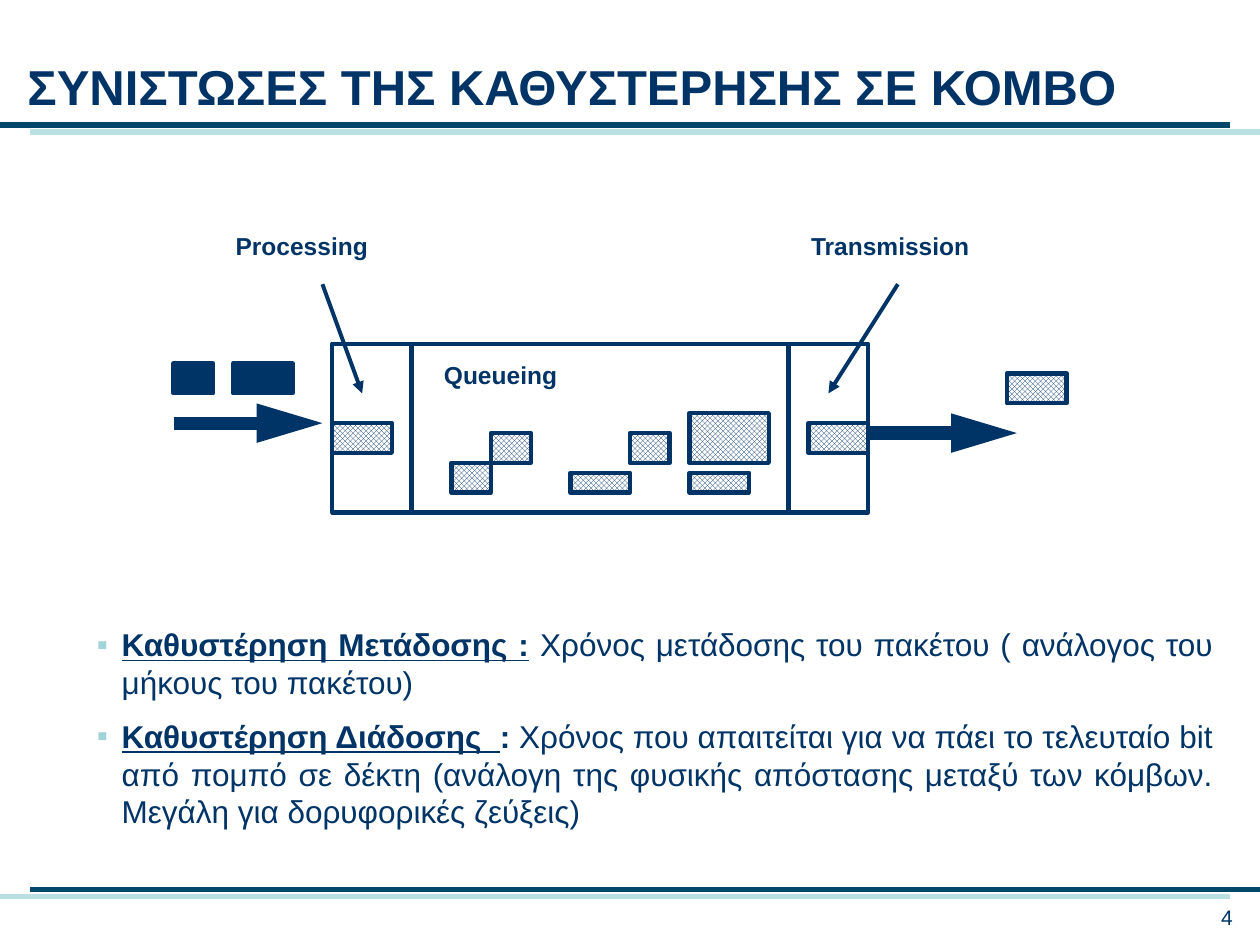
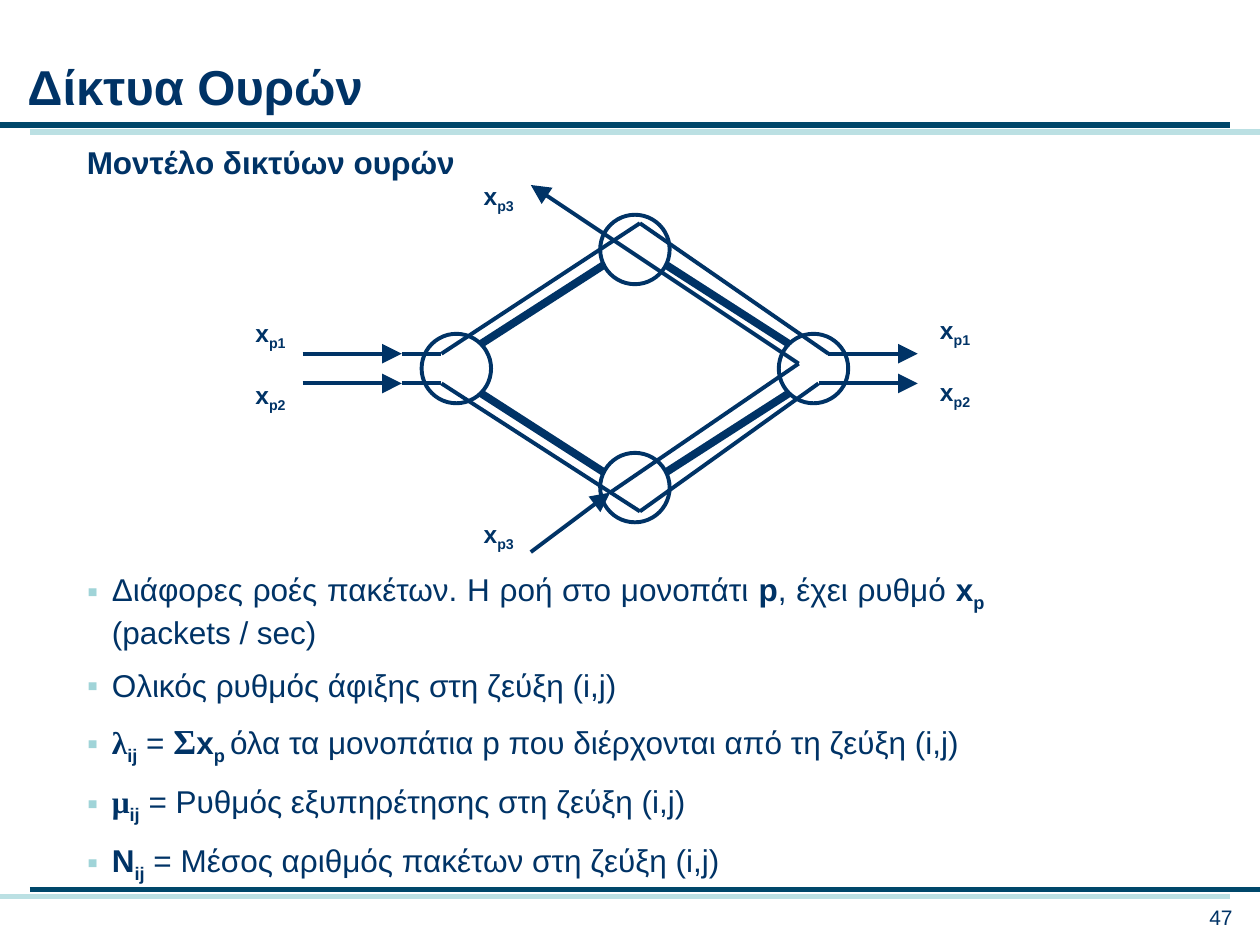
import pptx
import pptx.dml.color
import pptx.enum.dml
import pptx.enum.shapes
import pptx.enum.text
import pptx.oxml
import pptx.oxml.ns
import pptx.util
from lxml import etree

Cm, Pt = pptx.util.Cm, pptx.util.Pt
Align = pptx.enum.text.PP_ALIGN
Shape = pptx.enum.shapes.MSO_SHAPE
NAVY, RULE, PALE, BULLET, WHITE = "003366", "00476A", "BBE0E3", "A0D4D8", "FFFFFF"
BOLD = {"bold": True}
PLAIN = {}
SUB = {"bold": True, "subscript": True}
SERIF = {"bold": True, "name": "Times New Roman"}


def color(value):
    return pptx.dml.color.RGBColor.from_string(value)


def add_xml(parent, tag, **values):
    node = etree.SubElement(parent, pptx.oxml.ns.qn(tag))
    for name, value in values.items():
        node.set(name, value)
    return node


# Text
def write_span(para, text, style):
    span = para.add_run()
    span.text = text
    style = {"name": "Arial", "bold": False, **style}
    if style.pop("subscript", False):
        span._r.get_or_add_rPr().set("baseline", "-25000")
    for name, value in style.items():
        setattr(span.font, name, value)
    span.font.color.rgb = color(NAVY)


def write_text(box, paragraphs, size, align=Align.LEFT, indent=0.0):
    """Fill a box with paragraphs, bulleted when an indent is given."""
    frame = box.text_frame
    settings = {"word_wrap": True, "auto_size": pptx.enum.text.MSO_AUTO_SIZE.NONE,
                "vertical_anchor": pptx.enum.text.MSO_ANCHOR.TOP}
    for name, value in settings.items():
        setattr(frame, name, value)
    for index, spans in enumerate(paragraphs):
        para = frame.add_paragraph() if index else frame.paragraphs[0]
        para.alignment = align
        para.space_before = Pt(9 if index else 0)
        for text, style in spans:
            write_span(para, text, {"size": Pt(size), **style})
        if indent:
            props = para._p.get_or_add_pPr()
            props.set("marL", str(Cm(indent)))
            props.set("indent", str(-Cm(indent)))
            add_xml(add_xml(props, "a:buClr"), "a:srgbClr", val=BULLET)
            add_xml(props, "a:buChar", char="▪")


def add_text(page, left, top, width, height, spans, size, align=Align.LEFT):
    box = page.shapes.add_textbox(Cm(left), Cm(top), Cm(width), Cm(height))
    write_text(box, [spans], size, align)


def fill_placeholder(box, area, paragraphs, size, **layout):
    for name, value in zip(("left", "top", "width", "height"), area):
        setattr(box, name, Cm(value))
    write_text(box, paragraphs, size, **layout)


# Shapes and lines
def add_outline(page, kind, left, top, width, height, fill=None, weight=2.5):
    shape = page.shapes.add_shape(kind, Cm(left), Cm(top), Cm(width), Cm(height))
    shape.shadow.inherit = False
    shape.line.color.rgb = color(NAVY)
    shape.line.width = Pt(weight)
    if fill == "pattern":
        shape.fill.patterned()
        shape.fill.pattern = pptx.enum.dml.MSO_PATTERN.TRELLIS
        shape.fill.fore_color.rgb = color(NAVY)
        shape.fill.back_color.rgb = color(WHITE)
    elif fill:
        shape.fill.solid()
        shape.fill.fore_color.rgb = color(fill)
    else:
        shape.fill.background()


def add_line(page, start, end, weight=2.25, tint=NAVY, head=None):
    """Draw a line; head is the (width, length) of an arrowhead at its end."""
    line = page.shapes.add_connector(
        pptx.enum.shapes.MSO_CONNECTOR.STRAIGHT, *map(Cm, (*start, *end)))
    line.line.color.rgb = color(tint)
    line.line.width = Pt(weight)
    if head:
        add_xml(line.line._get_or_add_ln(), "a:tailEnd",
                type="triangle", w=head[0], len=head[1])
    add_xml(line._element.spPr, "a:effectLst")


# Frame shared by the slides
def add_page(deck, title, number):
    page = deck.slides.add_slide(deck.slide_layouts[1])
    inset, drop = 0.6, 0.14
    for y, dark_left, pale_left in ((2.52, 0, inset), (17.93, inset, 0)):
        for left, top, tint in ((pale_left, y + drop, PALE), (dark_left, y, RULE)):
            add_line(page, (left, top), (left + 25.4 - inset, top), 3, tint)
    fill_placeholder(page.shapes.title, (0.3, 1.02, 23.6, 1.45), [[(title, BOLD)]], 28)
    add_text(page, 22.3, 18.1, 2.8, 0.76, [(number, PLAIN)], 12, Align.RIGHT)
    return page


def add_body(page, area, paragraphs):
    fill_placeholder(page.placeholders[1], area, paragraphs, 18,
                     align=Align.JUSTIFY, indent=0.5)


# Node with its processing, queueing and transmission stages
def add_node_diagram(page, left, top):
    node_top = top + 2.4

    def at(x, y):
        return left + x, node_top + y

    for x, width in ((0, 0.8), (1.2, 1.2)):
        add_outline(page, Shape.RECTANGLE, *at(x, 0.4), width, 0.6, NAVY)
    for x, y in ((0, 1.6), (14, 1.8)):
        add_line(page, at(x, y), at(x + 3, y), 7.5, head=("med", "lg"))
    for x, width in ((3.2, 1.6), (4.8, 7.6), (12.4, 1.6)):
        add_outline(page, Shape.RECTANGLE, *at(x, 0), width, 3.4)

    packets = ((3.2, 1.6, 1.2, 0.6), (5.6, 2.4, 0.8, 0.6), (6.4, 1.8, 0.8, 0.6),
               (8, 2.6, 1.2, 0.4), (9.2, 1.8, 0.8, 0.6), (10.4, 1.4, 1.6, 1),
               (10.4, 2.6, 1.2, 0.4), (12.8, 1.6, 1.2, 0.6), (16.8, 0.6, 1.2, 0.6))
    for x, y, width, height in packets:
        add_outline(page, Shape.RECTANGLE, *at(x, y), width, height, "pattern")

    for text, x, y in (("Processing", 1, -2.4), ("Queueing", 5.2, 0.2),
                       ("Transmission", 12.6, -2.4)):
        add_text(page, *at(x, y), 5, 0.84, [(text, BOLD)], 14)
    for start_x, end_x in ((3, 3.8), (14.6, 13.2)):
        add_line(page, at(start_x, -1.2), at(end_x, 1), head=("med", "med"))


# Four linked nodes crossed by three flows
def add_queue_network(page, left, top, width, height):
    def at(x, y):
        return left + width / 2 + x, top + height / 2 + y

    for side in (-1, 1):
        for level in (-1, 1):
            add_line(page, at(side * 0.3, level * 2.3), at(side * 3.1, level * 0.5), 4.5)
    radius = 0.7
    for x, y in ((-3.6, 0), (0, 2.4), (3.6, 0), (0, -2.4)):
        add_outline(page, Shape.OVAL, *at(x - radius, y - radius),
                    2 * radius, 2 * radius, WHITE, 2.25)

    # Each flow has an arrowhead on its first and last segment
    flows = (((-6.7, -0.3), (-4.7, -0.3), (-3.9, -0.3), (0.1, -2.93), (3.9, -0.3), (5.7, -0.3)),
             ((-6.7, 0.3), (-4.7, 0.3), (-3.9, 0.3), (0.1, 2.88), (3.7, 0.3), (5.7, 0.3)),
             ((-2.1, 3.7), (-0.5, 2.5), (3.3, -0.1), (-2.1, -3.7)))
    for points in flows:
        last = len(points) - 2
        for index, (start, end) in enumerate(zip(points, points[1:])):
            head = ("lg", "lg") if index in (0, last) else None
            add_line(page, at(*start), at(*end), head=head)

    labels = (("p1", -7.9, -1.15), ("p1", 5.9, -1.2), ("p2", -7.9, 0.1),
              ("p2", 5.9, 0.05), ("p3", -3.3, 2.9), ("p3", -3.3, -3.9))
    for name, x, y in labels:
        add_text(page, *at(x, y), 1.8, 0.84, [("x", BOLD), (name, SUB)], 14)


def build_delay_slide(deck):
    page = add_page(deck, "ΣΥΝΙΣΤΩΣΕΣ ΤΗΣ ΚΑΘΥΣΤΕΡΗΣΗΣ ΣΕ ΚΟΜΒΟ", "4")
    add_node_diagram(page, 3.5, 4.53)
    term = {"bold": True, "underline": True}
    add_body(page, (1.7, 12.48, 23.01, 4.45), [
        [("Καθυστέρηση Μετάδοσης :", term), (" ", BOLD),
         ("Χρόνος μετάδοσης του πακέτου ( ανάλογος του μήκους του πακέτου)", PLAIN)],
        [("Καθυστέρηση Διάδοσης  ", term), (": ", BOLD),
         ("Χρόνος που απαιτείται για να πάει το τελευταίο bit από πομπό σε δέκτη "
          "(ανάλογη της φυσικής απόστασης μεταξύ των κόμβων. "
          "Μεγάλη για δορυφορικές ζεύξεις)", PLAIN)]])


def build_network_slide(deck):
    page = add_page(deck, "Δίκτυα Ουρών", "47")
    add_text(page, 1.5, 2.75, 8.8, 1.02, [("Μοντέλο δικτύων ουρών", BOLD)], 18)
    add_queue_network(page, 4.8, 3.43, 16, 8)
    add_body(page, (1.5, 11.36, 18.6, 6.53), [
        [("Διάφορες ροές πακέτων. Η ροή στο μονοπάτι ", PLAIN), ("p", BOLD),
         (", έχει ρυθμό ", PLAIN), ("x", BOLD), ("p", SUB), (" (packets / sec)", PLAIN)],
        [("Ολικός ρυθμός άφιξης στη ζεύξη (i,j)", PLAIN)],
        [("λ", SERIF), ("ij", SUB), (" = ", PLAIN), ("Σ", {**SERIF, "size": Pt(20)}),
         ("x", BOLD), ("p ", SUB),
         ("όλα τα μονοπάτια p που διέρχονται από τη ζεύξη (i,j)", PLAIN)],
        [("μ", SERIF), ("ij", SUB), (" = Ρυθμός εξυπηρέτησης στη ζεύξη (i,j)", PLAIN)],
        [("N", BOLD), ("ij", SUB), (" = Μέσος αριθμός πακέτων στη ζεύξη (i,j)", PLAIN)]])


def main():
    deck = pptx.Presentation()
    deck.slide_width, deck.slide_height = Cm(25.4), Cm(19.05)
    build_delay_slide(deck)
    build_network_slide(deck)
    deck.save("out.pptx")


if __name__ == "__main__":
    main()
